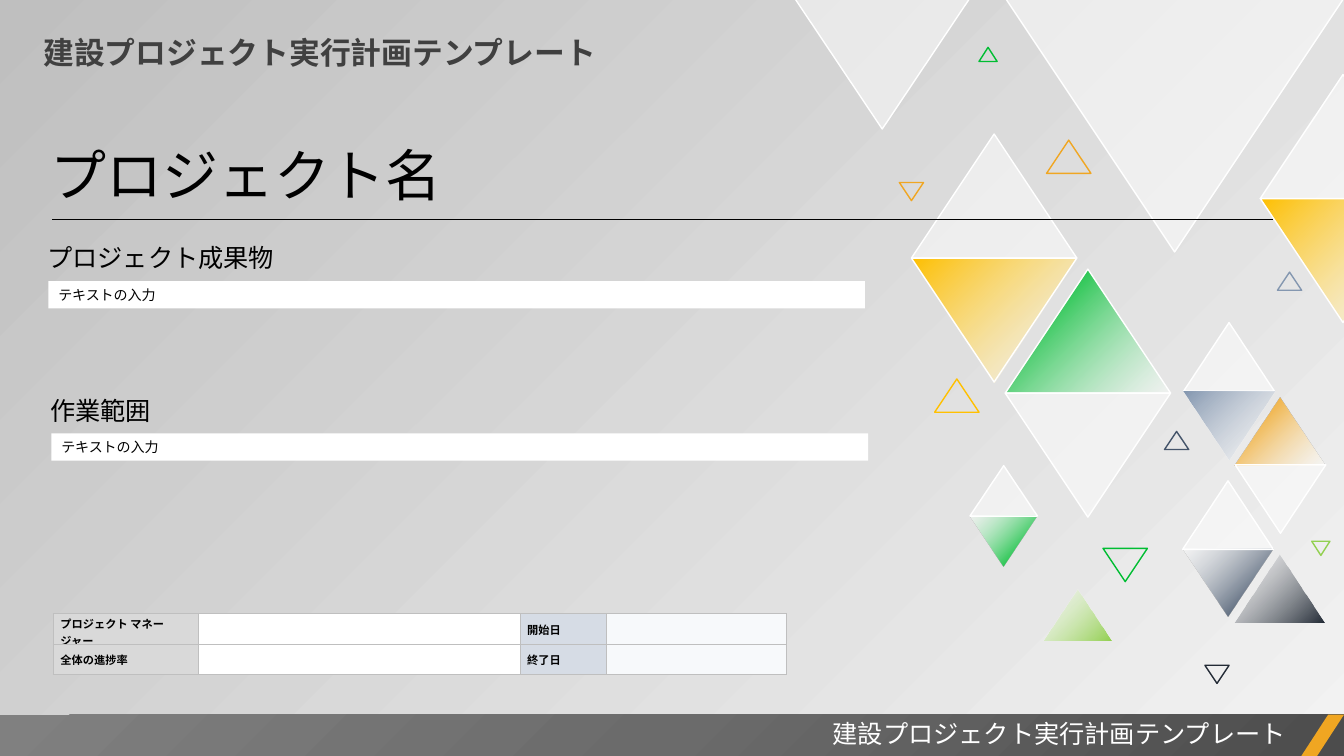
from lxml.etree import SubElement
from pptx import Presentation
from pptx.dml.color import RGBColor
from pptx.enum.shapes import MSO_CONNECTOR, MSO_SHAPE
from pptx.enum.text import MSO_ANCHOR, MSO_AUTO_SIZE, PP_ALIGN
from pptx.oxml.ns import qn
from pptx.util import Pt

PX = 9144  # 100 px to the inch
FONT = "League Spartan"
COLORS = {
    "white": "FFFFFF", "black": "000000", "heading": "404040",
    "mist": "F2F2F2", "silver": "BFBFBF", "label": "D9D9D9",
    "date label": "D6DCE5", "date": "F7F9FB",
    "gold": "FFC000", "orange": "F0A622", "green": "00BD32", "lime": "92D050",
    "steel": "8497B0", "slate": "44546A", "ink": "222A35",
    "footer dark": "4C4C4C", "footer mid": "6B6B6B", "footer light": "808080",
}
RGB = {name: RGBColor.from_string(value) for name, value in COLORS.items()}


def set_gradient(fill, element, stops, radial=False):
    """Give the fill found in element stops of (percent, colour, opacity)."""
    fill.gradient()
    gradient = next(element.iter(qn("a:gradFill")))
    for child in list(gradient):
        gradient.remove(child)
    gradient.set("rotWithShape", "1")
    stop_list = SubElement(gradient, qn("a:gsLst"))
    for percent, color, opacity in stops:
        stop = SubElement(stop_list, qn("a:gs"), pos=str(percent * 1000))
        tint = SubElement(stop, qn("a:srgbClr"), val=COLORS[color])
        if opacity < 100:
            SubElement(tint, qn("a:alpha"), val=str(opacity * 1000))
    if radial:
        circle = SubElement(gradient, qn("a:path"), path="circle")
        SubElement(circle, qn("a:fillToRect"), l="100000", t="100000")
    else:
        SubElement(gradient, qn("a:lin"), ang=str(225 * 60000), scaled="0")


def write(frame, wording, size, color="black", bold=False, align=PP_ALIGN.LEFT):
    frame.text = wording
    frame.word_wrap = True
    paragraph = frame.paragraphs[0]
    paragraph.alignment = align
    for run in paragraph.runs:
        run.font.name = FONT
        run.font.size = Pt(size)
        run.font.bold = bold
        run.font.color.rgb = RGB[color]


deck = Presentation()
deck.slide_width, deck.slide_height = 1333 * PX, 750 * PX
slide = deck.slides.add_slide(deck.slide_layouts[5])
shapes = slide.shapes
set_gradient(slide.background.fill, slide._element,
             [(0, "mist", 40), (100, "silver", 100)])

# Triangles: left, top, width, points down, kind, colour, white edge
triangles = [
    (904, 133, 164, False, "glass", "white", True),
    (904, 256, 164, True, "from", "gold", True),
    (997, 267, 164, False, "to", "green", True),
    (997, 390, 164, True, "glass", "white", True),
    (997, -2, 336, True, "glass", "white", True),
    (1224, 550, 90, False, "from", "ink", False),
    (1173, 544, 90, True, "to", "slate", False),
    (1173, 477, 90, False, "glass", "white", True),
    (1174, 320, 90, False, "glass", "white", True),
    (1174, 388, 90, True, "from", "steel", False),
    (1225, 394, 90, False, "to", "orange", False),
    (1225, 461, 90, True, "glass", "white", True),
    (1035, 585, 67, False, "from", "lime", False),
    (962, 512, 67, True, "to", "green", False),
    (962, 462, 67, False, "glass", "white", True),
    (1250, 74, 164, False, "glass", "white", True),
    (1250, 197, 164, True, "from", "gold", True),
    (1094, 544, 44, True, "outline", "green", True),
    (927, 376, 44, False, "outline", "gold", True),
    (1155, 428, 24, False, "outline", "slate", True),
    (1195, 660, 24, True, "outline", "ink", True),
    (892, 181, 24, True, "outline", "orange", True),
    (1267, 270, 24, False, "outline", "steel", True),
    (971, 47, 18, False, "outline", "green", True),
    (1301, 537, 18, True, "outline", "lime", True),
    (1038, 139, 44, False, "outline", "orange", True),
    (788, -2, 174, True, "glass", "white", True),
]
mosaic = shapes.add_group_shape()
for left, top, width, points_down, kind, color, edged in triangles:
    triangle = mosaic.shapes.add_shape(
        MSO_SHAPE.ISOSCELES_TRIANGLE,
        left * PX, top * PX, width * PX, round(width * 0.75) * PX)
    triangle.shadow.inherit = False
    triangle.rotation = 180 if points_down else 0
    properties = triangle._element.spPr
    if kind == "glass":
        triangle.fill.solid()
        triangle.fill.fore_color.rgb = RGB["white"]
        tint = next(properties.iter(qn("a:srgbClr")))
        SubElement(tint, qn("a:alpha"), val="50000")
    elif kind == "from":
        set_gradient(triangle.fill, properties,
                     [(0, color, 100), (100, "white", 50)])
    elif kind == "to":
        set_gradient(triangle.fill, properties,
                     [(0, "white", 50), (82, color, 100)])
    else:
        triangle.fill.background()
    if edged:
        triangle.line.color.rgb = RGB[color if kind == "outline" else "white"]
        triangle.line.width = Pt(1)
    else:
        triangle.line.fill.background()

# Heading
heading = shapes.title
heading.left, heading.top, heading.width, heading.height = (
    33 * PX, 28 * PX, 861 * PX, 47 * PX)
write(heading.text_frame, "建設プロジェクト実行計画テンプレート", 22, "heading", True)
heading.text_frame.vertical_anchor = MSO_ANCHOR.TOP
heading.text_frame.auto_size = MSO_AUTO_SIZE.SHAPE_TO_FIT_TEXT

# Footer
footer = shapes.add_shape(MSO_SHAPE.RECTANGLE, 0, 709 * PX, 1333 * PX, 42 * PX)
set_gradient(footer.fill, footer._element.spPr,
             [(0, "footer dark", 100), (50, "footer mid", 100),
              (100, "footer light", 100)], radial=True)
accent = shapes.add_shape(
    MSO_SHAPE.PARALLELOGRAM, 1290 * PX, 709 * PX, 43 * PX, 42 * PX)
accent.adjustments[0] = 0.65
accent.fill.solid()
accent.fill.fore_color.rgb = RGB["orange"]
for band in (footer, accent):
    band.shadow.inherit = False
    band.line.fill.background()

# Captions: left, top, width, height, wording, size, colour, alignment
captions = [
    (525, 708, 760, 40, "建設プロジェクト実行計画テンプレート", 18, "white", PP_ALIGN.RIGHT),
    (40, 135, 1227, 77, "プロジェクト名", 40, "black", PP_ALIGN.LEFT),
    (37, 236, 305, 40, "プロジェクト成果物", 18, "black", PP_ALIGN.LEFT),
    (40, 387, 305, 40, "作業範囲", 18, "black", PP_ALIGN.LEFT),
]
for left, top, width, height, wording, size, color, align in captions:
    caption = shapes.add_textbox(left * PX, top * PX, width * PX, height * PX)
    write(caption.text_frame, wording, size, color, align=align)
    caption.text_frame.auto_size = MSO_AUTO_SIZE.SHAPE_TO_FIT_TEXT

rule = shapes.add_connector(
    MSO_CONNECTOR.STRAIGHT, 52 * PX, 218 * PX, 1263 * PX, 218 * PX)
rule.line.color.rgb = RGB["black"]
rule.line.width = Pt(0.5)
SubElement(rule._element.spPr, qn("a:effectLst"))

# Entry fields
for left, top in [(48, 279), (51, 430)]:
    field = shapes.add_shape(
        MSO_SHAPE.RECTANGLE, left * PX, top * PX, 810 * PX, 27 * PX)
    field.shadow.inherit = False
    field.fill.solid()
    field.fill.fore_color.rgb = RGB["white"]
    field.line.fill.background()
    write(field.text_frame, "テキストの入力", 10)
    field.text_frame.vertical_anchor = MSO_ANCHOR.TOP
    field.text_frame.auto_size = MSO_AUTO_SIZE.SHAPE_TO_FIT_TEXT

# Status table
status_rows = [
    ("プロジェクト マネージャー", "", "開始日", ""),
    ("全体の進捗率", "", "終了日", ""),
]
column_widths = [144, 319, 86, 178]
column_fills = ["label", "white", "date label", "date"]
status = shapes.add_table(2, 4, 53 * PX, 609 * PX, 727 * PX, 60 * PX).table
status.first_row = status.horz_banding = False
for column, width in zip(status.columns, column_widths):
    column.width = width * PX
for row, wordings in zip(status.rows, status_rows):
    row.height = 30 * PX
    for cell, wording, color in zip(row.cells, wordings, column_fills):
        write(cell.text_frame, wording, 8, bold=True)
        paragraph = cell.text_frame.paragraphs[0]
        paragraph.line_spacing = 1.07
        paragraph._p.get_or_add_endParaRPr().set("sz", "800")
        cell.vertical_anchor = MSO_ANCHOR.MIDDLE
        cell.margin_left = cell.margin_right = 7 * PX
        cell.margin_top = cell.margin_bottom = 0
        cell_properties = cell._tc.get_or_add_tcPr()
        for side in ("L", "R", "T", "B"):
            border = SubElement(cell_properties, qn(f"a:ln{side}"), w=str(Pt(1)))
            paint = SubElement(border, qn("a:solidFill"))
            SubElement(paint, qn("a:srgbClr"), val=COLORS["silver"])
        cell.fill.solid()
        cell.fill.fore_color.rgb = RGB[color]

deck.save("out.pptx")
